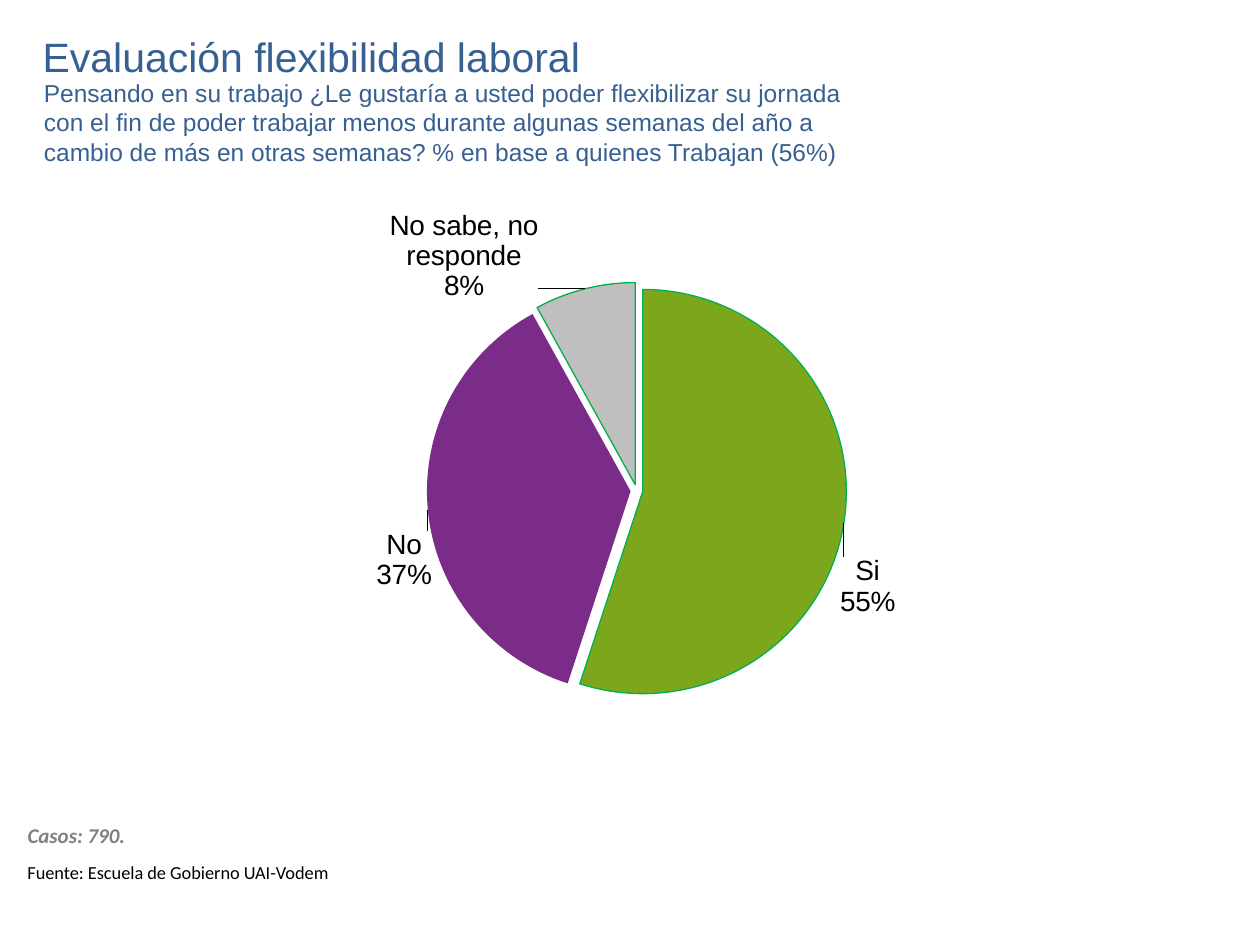
from dataclasses import dataclass

from lxml.etree import SubElement
from pptx import Presentation
from pptx.chart.data import CategoryChartData
from pptx.dml.color import RGBColor
from pptx.enum.chart import XL_CHART_TYPE, XL_LABEL_POSITION
from pptx.enum.text import MSO_ANCHOR, MSO_AUTO_SIZE
from pptx.oxml import parse_xml
from pptx.oxml.ns import nsdecls, qn
from pptx.util import Inches, Pt

WIDE, HIGH = Inches(10), Inches(7.5)


@dataclass(frozen=True)
class Theme:
    blue: str = "376092"
    black: str = "000000"
    grey: str = "808080"
    edge: str = "00B050"
    sans: str = "Arial"
    body: str = "Calibri"
    title: float = 23.4
    text: float = 14
    label: float = 16
    note: float = 12
    small: float = 10.5


@dataclass(frozen=True)
class Box:
    """Left, top, width and height as shares of the slide."""
    left: float
    top: float
    width: float
    height: float

    def place(self) -> tuple[int, int, int, int]:
        return (int(self.left * WIDE), int(self.top * HIGH),
                int(self.width * WIDE), int(self.height * HIGH))


@dataclass(frozen=True)
class Note:
    box: Box
    lines: tuple[str, ...]
    size: float
    color: str
    font: str
    strong: bool = False
    wrap: bool = True
    middle: bool = False


@dataclass(frozen=True)
class Slice:
    """A pie slice; shift moves its label by shares of the chart."""
    name: str
    value: int
    color: str
    edged: bool
    shift: tuple[float, float]


THEME = Theme()
NOTES = (
    Note(Box(0.025, 0.076, 0.853, 0.108), (
        "Pensando en su trabajo ¿Le gustaría a usted poder flexibilizar su jornada",
        "con el fin de poder trabajar menos durante algunas semanas del año a",
        "cambio de más en otras semanas? % en base a quienes Trabajan (56%)",
    ), THEME.text, THEME.blue, THEME.sans),
    Note(Box(0.024, 0.017, 0.807, 0.085), ("Evaluación flexibilidad laboral",),
         THEME.title, THEME.blue, THEME.sans, middle=True),
    Note(Box(0.012, 0.864, 0.118, 0.04), ("Casos: 790.",),
         THEME.note, THEME.grey, THEME.body, strong=True, wrap=False),
    Note(Box(0.012, 0.905, 0.263, 0.037), ("Fuente: Escuela de Gobierno UAI-Vodem",),
         THEME.small, THEME.black, THEME.body, wrap=False),
)
SLICES = (
    Slice("Si", 55, "7CA71D", True, (-0.01, 0.05)),
    Slice("No", 37, "7B2C88", False, (0.01, 0.03)),
    Slice("No sabe, no responde", 8, "BFBFBF", True, (-0.04, 0.03)),
)
PIE_BOX = Box(0.067, 0.203, 0.882, 0.683)
PLOT_BOX = Box(0.164, 0.134, 0.666, 0.65)


def add_note(slide, note: Note) -> None:
    frame = slide.shapes.add_textbox(*note.box.place()).text_frame
    frame.word_wrap = note.wrap
    if note.middle:
        frame.vertical_anchor = MSO_ANCHOR.MIDDLE
    else:
        frame.auto_size = MSO_AUTO_SIZE.SHAPE_TO_FIT_TEXT
    frame.text = "\n".join(note.lines)
    for para in frame.paragraphs:
        font = para.font
        font.name, font.size = note.font, Pt(note.size)
        font.bold = font.italic = note.strong
        font.color.rgb = RGBColor.from_string(note.color)


def make_layout(**parts):
    """Build a manual chart layout from its named parts."""
    body = "".join(f'<c:{key} val="{val}"/>' for key, val in parts.items())
    return parse_xml(f'<c:layout {nsdecls("c")}><c:manualLayout>{body}'
                     "</c:manualLayout></c:layout>")


def set_label(label, shift: tuple[float, float]) -> None:
    """Show category and percentage on two lines, moved by the shift."""
    label.find(qn("c:idx")).addnext(make_layout(x=shift[0], y=shift[1]))
    for tag, val in (("showVal", "0"), ("showCatName", "1"), ("showPercent", "1")):
        label.find(qn(f"c:{tag}")).set("val", val)
    SubElement(label, qn("c:separator")).text = "\n"


def add_pie(slide) -> None:
    data = CategoryChartData()
    data.categories = [part.name for part in SLICES]
    data.add_series("Series 1", [part.value for part in SLICES])
    chart = slide.shapes.add_chart(XL_CHART_TYPE.PIE, *PIE_BOX.place(), data).chart
    chart.has_legend = chart.has_title = False
    chart.font.name, chart.font.size = THEME.sans, Pt(THEME.label)
    chart.font.color.rgb = RGBColor.from_string(THEME.black)
    plot = chart.plots[0]
    plot.vary_by_categories = True
    series = plot.series[0]
    labels = series.data_labels
    labels.number_format, labels.number_format_is_linked = "0%", False
    labels.show_value = False
    labels.show_percentage = labels.show_category_name = True
    for num, part in enumerate(SLICES):
        point = series.points[num]
        form = point.format
        form.fill.solid()
        form.fill.fore_color.rgb = RGBColor.from_string(part.color)
        if part.edged:
            form.line.width = Pt(0.75)
            form.line.color.rgb = RGBColor.from_string(THEME.edge)
        else:
            form.line.fill.background()
        point.data_label.position = XL_LABEL_POSITION.OUTSIDE_END
    root = chart.element
    for label, part in zip(root.iter(qn("c:dLbl")), SLICES):
        set_label(label, part.shift)
    first = next(root.iter(qn("c:dPt")))
    first.addprevious(parse_xml(f'<c:explosion {nsdecls("c")} val="3"/>'))
    area = next(root.iter(qn("c:plotArea")))
    for old in area.findall(qn("c:layout")):
        area.remove(old)
    area.insert(0, make_layout(
        layoutTarget="inner", xMode="edge", yMode="edge", x=PLOT_BOX.left,
        y=PLOT_BOX.top, w=PLOT_BOX.width, h=PLOT_BOX.height))


def main() -> None:
    deck = Presentation()
    deck.slide_width, deck.slide_height = WIDE, HIGH
    slide = deck.slides.add_slide(deck.slide_layouts[6])
    add_pie(slide)
    for note in NOTES:
        add_note(slide, note)
    deck.save("out.pptx")


if __name__ == "__main__":
    main()
